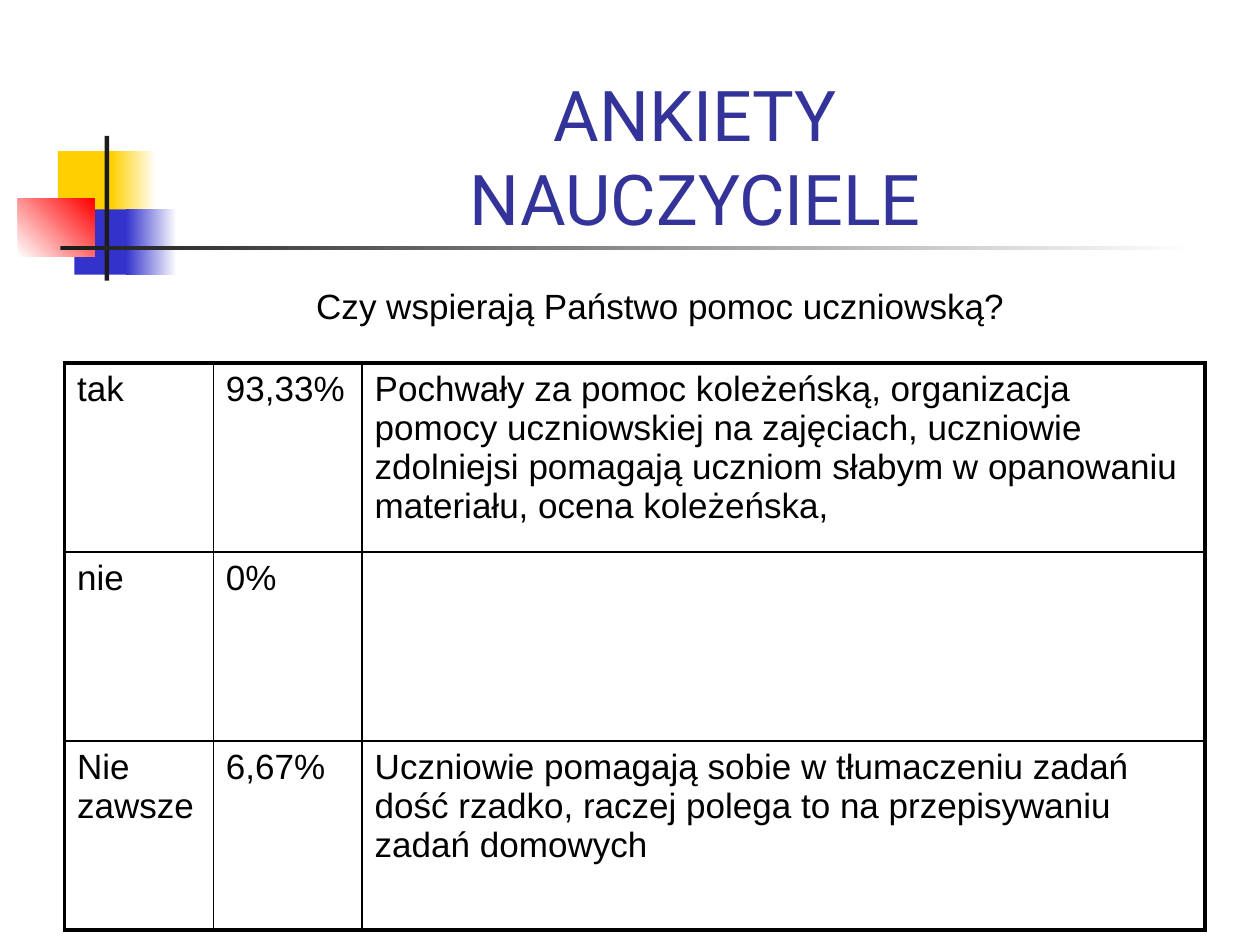
from dataclasses import dataclass

from lxml.etree import SubElement
from pptx import Presentation
from pptx.dml.color import RGBColor
from pptx.enum.shapes import MSO_SHAPE
from pptx.enum.text import MSO_ANCHOR, PP_ALIGN
from pptx.oxml.ns import qn
from pptx.util import Cm, Pt


@dataclass(frozen=True)
class Theme:
    yellow: str = "FFCF01"
    blue: str = "3333CC"
    red: str = "FF0000"
    dark: str = "1C1C1C"
    white: str = "FFFFFF"
    black: str = "000000"
    heading: str = "333399"
    heading_font: str = "Roboto"
    body_font: str = "Arial"
    heading_size: int = 40
    body_size: int = 20
    outer_border: float = 2.25
    inner_border: float = 1


THEME = Theme()

HEADING = ["ANKIETY", "NAUCZYCIELE"]
QUESTION = ["Czy wspierają Państwo pomoc uczniowską?"]
ANSWERS = [
    ("tak", "93,33%",
     "Pochwały za pomoc koleżeńską, organizacja pomocy uczniowskiej na zajęciach, "
     "uczniowie zdolniejsi pomagają uczniom słabym w opanowaniu materiału, "
     "ocena koleżeńska,"),
    ("nie", "0%", ""),
    ("Nie zawsze", "6,67%",
     "Uczniowie pomagają sobie w tłumaczeniu zadań dość rzadko, "
     "raczej polega to na przepisywaniu zadań domowych"),
]

# Left, top, width, height in cm; colours (two make a gradient); gradient angle
ORNAMENT = [
    ((1.17, 3.05, 1.22, 1.32), (THEME.yellow,), 0),
    ((2.24, 3.05, 0.91, 1.32), (THEME.yellow, THEME.white), 0),
    ((1.5, 4.22, 1.17, 1.32), (THEME.blue,), 0),
    ((2.54, 4.22, 1.02, 1.32), (THEME.blue, THEME.white), 0),
    ((0.36, 4.01, 1.55, 1.17), (THEME.white, THEME.red), 45),
    ((2.11, 2.74, 0.09, 2.92), (THEME.dark,), 0),
    ((1.22, 4.95, 22.86, 0.09), (THEME.dark, THEME.white), 0),
]
HEADING_AREA = (3.2, 1.32, 21.64, 3.18)
QUESTION_AREA = (2.49, 5.54, 21.64, 1.17)
TABLE_LEFT, TABLE_TOP = 1.3, 7.32
COLUMN_WIDTHS = (3, 3, 16.99)
ROW_HEIGHT = 3.81


def lengths(area):
    return [Cm(value) for value in area]


def add_block(page, area, colours, angle):
    block = page.shapes.add_shape(MSO_SHAPE.RECTANGLE, *lengths(area))
    block.shadow.inherit = False
    block.line.fill.background()
    if len(colours) == 1:
        block.fill.solid()
        block.fill.fore_color.rgb = RGBColor.from_string(colours[0])
        return
    block.fill.gradient()
    block.fill.gradient_angle = angle
    for stop, colour in zip(block.fill.gradient_stops, colours):
        stop.color.rgb = RGBColor.from_string(colour)


def style_text(frame, font, size, colour, align):
    for paragraph in frame.paragraphs:
        paragraph.alignment = align
        for span in paragraph.runs:
            span.font.name = font
            span.font.size = Pt(size)
            span.font.color.rgb = RGBColor.from_string(colour)


def add_text(page, area, lines, anchor, font, size, colour):
    frame = page.shapes.add_textbox(*lengths(area)).text_frame
    frame.word_wrap = True
    frame.vertical_anchor = anchor
    frame.text = "\n".join(lines)
    style_text(frame, font, size, colour, PP_ALIGN.CENTER)


def set_borders(cell, outer_sides):
    """Draw all four borders, heavier on the sides at the table's edge."""
    properties = cell._tc.get_or_add_tcPr()
    for side, is_outer in outer_sides.items():
        width = THEME.outer_border if is_outer else THEME.inner_border
        line = SubElement(properties, qn(f"a:ln{side}"), w=str(Pt(width)))
        fill = SubElement(line, qn("a:solidFill"))
        SubElement(fill, qn("a:srgbClr"), val=THEME.black)


def add_answers(page):
    area = (TABLE_LEFT, TABLE_TOP, sum(COLUMN_WIDTHS), ROW_HEIGHT * len(ANSWERS))
    table = page.shapes.add_table(
        len(ANSWERS), len(COLUMN_WIDTHS), *lengths(area)).table
    table.first_row = table.horz_banding = False
    for column, width in zip(table.columns, COLUMN_WIDTHS):
        column.width = Cm(width)
    for r, answer in enumerate(ANSWERS):
        table.rows[r].height = Cm(ROW_HEIGHT)
        for c, text in enumerate(answer):
            cell = table.cell(r, c)
            set_borders(cell, {
                "L": c == 0, "R": c == len(answer) - 1,
                "T": r == 0, "B": r == len(ANSWERS) - 1,
            })
            cell.fill.background()
            cell.text_frame.text = text
            style_text(cell.text_frame, THEME.body_font, THEME.body_size,
                       THEME.black, PP_ALIGN.LEFT)


def main():
    deck = Presentation()
    deck.slide_width, deck.slide_height = Cm(25.4), Cm(19.05)
    page = deck.slides.add_slide(deck.slide_layouts[6])
    for area, colours, angle in ORNAMENT:
        add_block(page, area, colours, angle)
    add_text(page, QUESTION_AREA, QUESTION, MSO_ANCHOR.BOTTOM,
             THEME.body_font, THEME.body_size, THEME.black)
    add_answers(page)
    add_text(page, HEADING_AREA, HEADING, MSO_ANCHOR.TOP,
             THEME.heading_font, THEME.heading_size, THEME.heading)
    deck.save("out.pptx")


if __name__ == "__main__":
    main()
